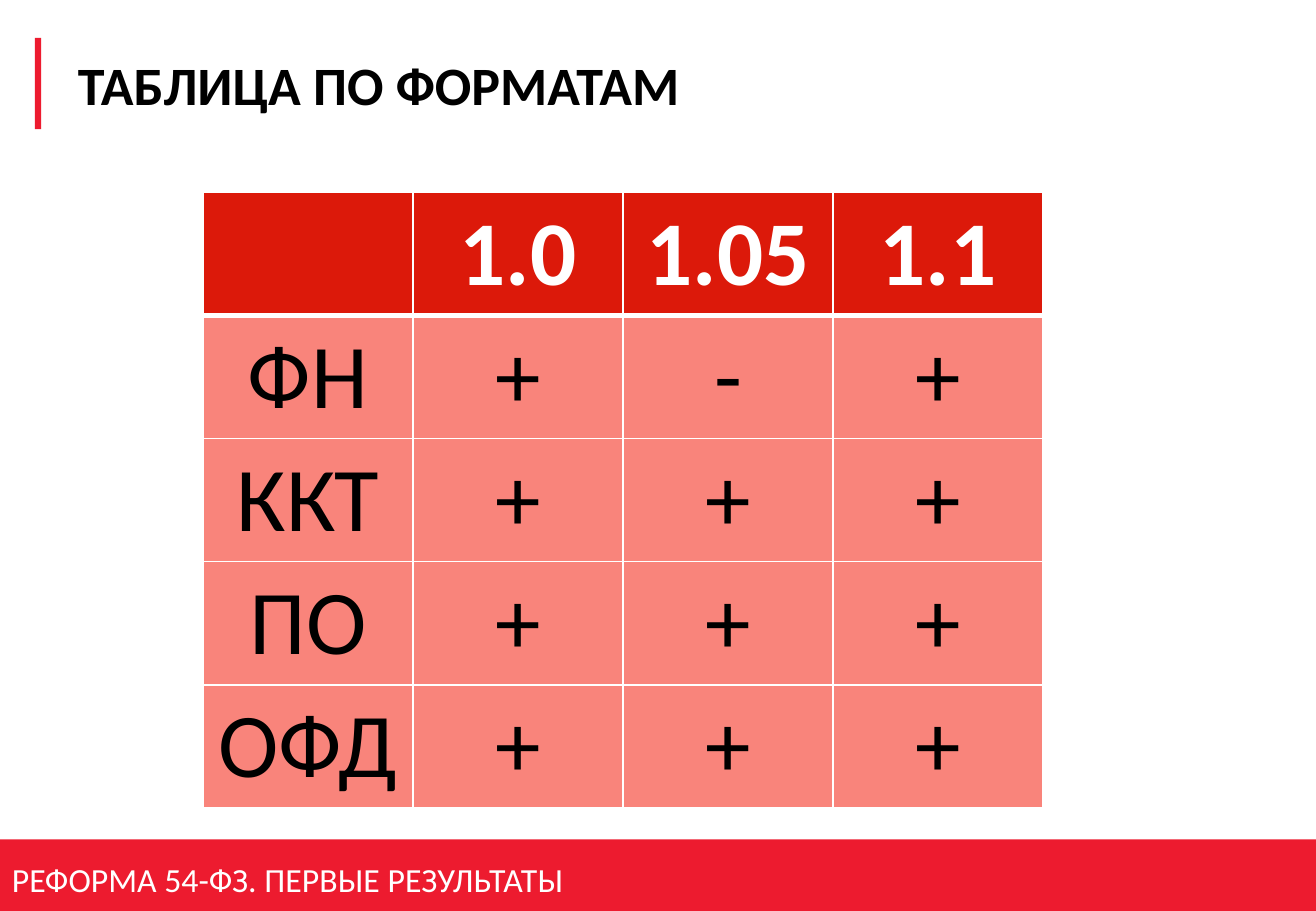
from lxml import etree
from pptx import Presentation
from pptx import util as u
from pptx.dml.color import RGBColor
from pptx.enum import shapes, text
from pptx.oxml import ns

RED = RGBColor(0xED, 0x1B, 0x2F)
HEADER_RED = RGBColor(0xDC, 0x19, 0x0A)
PINK = RGBColor(0xF9, 0x84, 0x7B)
WHITE = RGBColor(0xFF, 0xFF, 0xFF)
BLACK = RGBColor(0, 0, 0)

FORMATS = [
    ["", "1.0", "1.05", "1.1"],
    ["ФН", "+", "-", "+"],
    ["ККТ", "+", "+", "+"],
    ["ПО", "+", "+", "+"],
    ["ОФД", "+", "+", "+"],
]


class SlideBuilder:
    """Holds the style and the current slide; lengths are in points."""

    font = "Calibri"

    def __init__(self, page):
        self.page = page

    def add_words(self, frame, words, size, color, bold=False, align=text.PP_ALIGN.LEFT):
        para = frame.paragraphs[0]
        para.alignment = align
        span = para.add_run()
        span.text = words
        span.font.name = self.font
        span.font.size = u.Pt(size)
        span.font.bold = bold
        span.font.color.rgb = color

    def bar(self, left, top, width, height):
        box = self.page.shapes.add_shape(
            shapes.MSO_SHAPE.RECTANGLE, *map(u.Pt, (left, top, width, height)))
        box.shadow.inherit = False
        box.fill.solid()
        box.fill.fore_color.rgb = RED
        box.line.fill.background()

    def label(self, left, top, width, height, words, size, color):
        box = self.page.shapes.add_textbox(*map(u.Pt, (left, top, width, height)))
        box.text_frame.word_wrap = False
        box.text_frame.auto_size = text.MSO_AUTO_SIZE.SHAPE_TO_FIT_TEXT
        self.add_words(box.text_frame, words, size, color)

    def title(self, left, top, width, height, words, size):
        box = self.page.shapes.title
        box.left, box.top, box.width, box.height = map(u.Pt, (left, top, width, height))
        frame = box.text_frame
        frame.auto_size = text.MSO_AUTO_SIZE.NONE
        frame.vertical_anchor = text.MSO_ANCHOR.MIDDLE
        self.add_words(frame, words, size, BLACK, bold=True)

    def border(self, cell, side, width):
        props = cell._tc.get_or_add_tcPr()
        line = etree.SubElement(props, ns.qn("a:ln" + side), w=str(u.Pt(width)))
        fill = etree.SubElement(line, ns.qn("a:solidFill"))
        etree.SubElement(fill, ns.qn("a:srgbClr"), val=str(WHITE))

    def table(self, left, top, column_width, row_height, rows, size):
        columns = len(rows[0])
        area = (left, top, column_width * columns, row_height * len(rows))
        grid = self.page.shapes.add_table(len(rows), columns, *map(u.Pt, area)).table
        for r, row in enumerate(rows):
            header = r == 0
            widths = {"L": 1, "R": 1, "T": 3 if r == 1 else 1, "B": 3 if header else 1}
            for c, words in enumerate(row):
                cell = grid.cell(r, c)
                for side, width in widths.items():
                    self.border(cell, side, width)
                cell.fill.solid()
                cell.fill.fore_color.rgb = HEADER_RED if header else PINK
                if words:
                    self.add_words(cell.text_frame, words, size, WHITE if header else BLACK,
                                   bold=header, align=text.PP_ALIGN.CENTER)


def main():
    deck = Presentation()
    deck.slide_width, deck.slide_height = u.Pt(780), u.Pt(540)
    builder = SlideBuilder(deck.slides.add_slide(deck.slide_layouts[5]))
    builder.bar(20.7, 22.5, 3.8, 54)
    builder.bar(0, 497.5, 780, 46.8)
    builder.label(0, 505.5, 344, 31.5, "РЕФОРМА 54-ФЗ. ПЕРВЫЕ РЕЗУЛЬТАТЫ", 20, WHITE)
    builder.title(38.9, 22.5, 578, 54, "ТАБЛИЦА ПО ФОРМАТАМ", 32)
    builder.table(120.3, 114, 124.5, 73, FORMATS, 54)
    deck.save("out.pptx")


if __name__ == "__main__":
    main()
